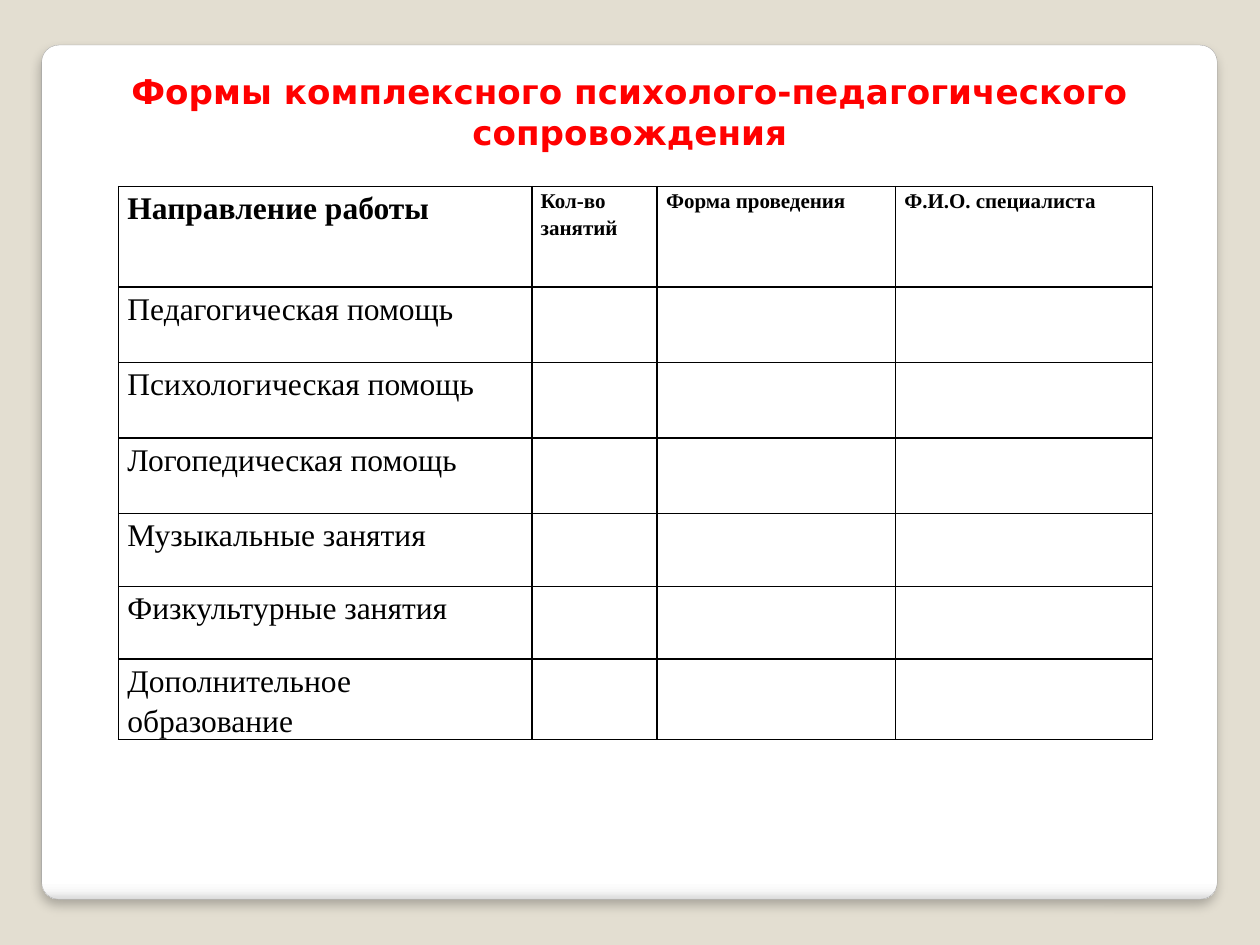
from lxml import etree
from pptx import Presentation
from pptx.dml.color import RGBColor
from pptx.enum.shapes import MSO_SHAPE
from pptx.enum.text import PP_ALIGN
from pptx.oxml.ns import qn
from pptx.util import Cm, Pt

ROUNDED = MSO_SHAPE.ROUNDED_RECTANGLE
CENTER = PP_ALIGN.CENTER

COLORS = {
    "background": "E3DED1",
    "panel": "FFFFFF",
    "panel_shade": "F7F7F7",
    "panel_edge": "DADADA",
    "panel_line": "A4A4A4",
    "title": "FF0000",
    "ink": "000000",
}
TITLE = "Формы комплексного психолого-педагогического сопровождения"
HEADINGS = ["Направление работы", "Кол-во занятий", "Форма проведения", "Ф.И.О. специалиста"]
DIRECTIONS = [
    "Педагогическая помощь",
    "Психологическая помощь",
    "Логопедическая помощь",
    "Музыкальные занятия",
    "Физкультурные занятия",
    "Дополнительное образование",
]
COLUMN_WIDTHS = [8.33, 2.53, 4.8, 5.18]
ROW_HEIGHTS = [2.03, 1.52, 1.52, 1.52, 1.47, 1.47, 1.52]


def rgb(name):
    return RGBColor.from_string(COLORS[name])


def add_xml(parent, tag, **attributes):
    values = {key: str(value) for key, value in attributes.items()}
    return etree.SubElement(parent, qn(tag), values)


def add_span(para, text, size, font, color, bold=False):
    span = para.add_run()
    span.text = text
    span.font.size = Pt(size)
    span.font.name = font
    span.font.bold = bold
    span.font.color.rgb = rgb(color)


def add_panel(page):
    panel = page.shapes.add_shape(ROUNDED, Cm(0.84), Cm(0.91), Cm(23.7), Cm(17.22))
    panel.adjustments[0] = 0.02
    panel.line.color.rgb = rgb("panel_line")
    panel.line.width = Pt(0.16)

    # White fill that darkens at the bottom edge
    panel.fill.gradient()
    panel.fill.gradient_angle = 270
    properties = panel.element.spPr
    stops = properties.find(qn("a:gradFill")).find(qn("a:gsLst"))
    stops.clear()
    for percent, name in [(0, "panel"), (98, "panel"), (99, "panel_shade"), (100, "panel_edge")]:
        stop = add_xml(stops, "a:gs", pos=percent * 1000)
        add_xml(stop, "a:srgbClr", val=COLORS[name])

    # Soft shadow straight below
    panel.shadow.inherit = False
    effects = properties.find(qn("a:effectLst"))
    shadow = add_xml(effects, "a:outerShdw", blurRad=Pt(6), dist=Pt(4), dir=90 * 60000, rotWithShape=0)
    shade = add_xml(shadow, "a:srgbClr", val=COLORS["ink"])
    add_xml(shade, "a:alpha", val=25000)


def add_borders(cell):
    properties = cell._tc.get_or_add_tcPr()
    for side in ("a:lnL", "a:lnR", "a:lnT", "a:lnB"):
        border = add_xml(properties, side, w=Pt(1))
        fill = add_xml(border, "a:solidFill")
        add_xml(fill, "a:srgbClr", val=COLORS["ink"])


def fill_cell(cell, text, size, bold):
    add_borders(cell)
    cell.fill.background()
    cell.margin_left = cell.margin_right = Cm(0.18)
    cell.margin_top = cell.margin_bottom = 0
    if text:
        para = cell.text_frame.paragraphs[0]
        para.line_spacing = 1.15
        add_span(para, text, size, "Times New Roman", "ink", bold)


def add_work_table(page):
    rows = [HEADINGS] + [[direction, "", "", ""] for direction in DIRECTIONS]
    frame = page.shapes.add_table(
        len(rows), len(HEADINGS), Cm(2.39), Cm(3.76), Cm(sum(COLUMN_WIDTHS)), Cm(sum(ROW_HEIGHTS))
    )
    table = frame.table
    table.first_row = table.horz_banding = False
    for column, width in zip(table.columns, COLUMN_WIDTHS):
        column.width = Cm(width)
    for row, height in zip(table.rows, ROW_HEIGHTS):
        row.height = Cm(height)
    for i, texts in enumerate(rows):
        for j, text in enumerate(texts):
            fill_cell(table.cell(i, j), text, 18 if j == 0 else 12, bold=i == 0)


def add_title(page):
    box = page.shapes.add_textbox(Cm(1.17), Cm(1.3), Cm(23.06), Cm(1.85))
    box.text_frame.word_wrap = True
    para = box.text_frame.paragraphs[0]
    para.alignment = CENTER
    add_span(para, TITLE, 19.5, "DejaVu Sans", "title", bold=True)


def main():
    deck = Presentation()
    deck.slide_width, deck.slide_height = Cm(25.4), Cm(19.05)
    page = deck.slides.add_slide(deck.slide_layouts[6])
    page.background.fill.solid()
    page.background.fill.fore_color.rgb = rgb("background")
    add_panel(page)
    add_work_table(page)
    add_title(page)
    deck.save("out.pptx")


if __name__ == "__main__":
    main()
